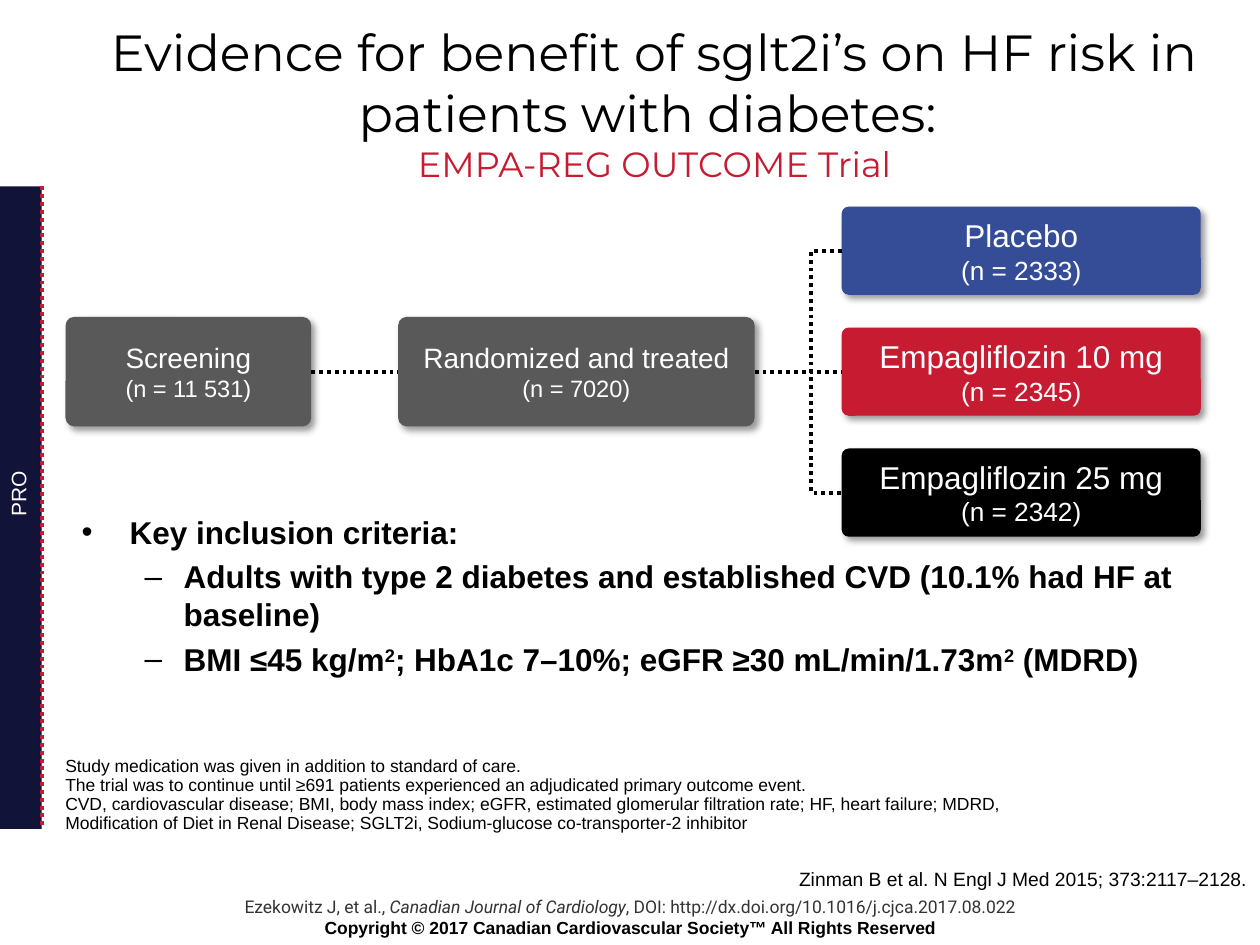
from lxml import etree
from pptx import Presentation
from pptx.dml.color import RGBColor
from pptx.enum.dml import MSO_LINE
from pptx.enum.shapes import MSO_CONNECTOR, MSO_SHAPE
from pptx.enum.text import MSO_ANCHOR, PP_ALIGN
from pptx.oxml import parse_xml
from pptx.oxml.ns import nsdecls, qn
from pptx.util import Inches, Pt

BLACK, WHITE, RED, NAVY, BLUE, GRAY = (
    "000000", "FFFFFF", "C71B32", "111338", "354C97", "595959")
LEFT_SIDE, RIGHT_SIDE = 1, 3


def color(hex_code):
    return RGBColor.from_string(hex_code)


def add_span(para, text, size, hex_code=BLACK, font="Arial", bold=False, italic=False):
    span = para.add_run()
    span.text = text
    span.font.size = Pt(size)
    span.font.name = font
    span.font.bold = bold
    span.font.italic = italic
    span.font.color.rgb = color(hex_code)
    return span


def add_textbox(page, left, top, width, height, anchor=MSO_ANCHOR.TOP, wrap=True):
    box = page.shapes.add_textbox(*map(Inches, (left, top, width, height)))
    box.text_frame.word_wrap = wrap
    box.text_frame.vertical_anchor = anchor
    return box


def next_para(frame, index):
    return frame.add_paragraph() if index else frame.paragraphs[0]


def dot_line(line, hex_code=BLACK):
    line.color.rgb = color(hex_code)
    line.width = Pt(2.25)
    line.dash_style = MSO_LINE.ROUND_DOT


def add_dotted(page, x1, y1, x2, y2, hex_code=BLACK):
    link = page.shapes.add_connector(
        MSO_CONNECTOR.STRAIGHT, *map(Inches, (x1, y1, x2, y2)))
    dot_line(link.line, hex_code)
    etree.SubElement(link._element.spPr, qn("a:effectLst"))
    return link


def add_block(page, kind, left, top, width, height, fill):
    block = page.shapes.add_shape(kind, *map(Inches, (left, top, width, height)))
    block.shadow.inherit = False
    block.fill.solid()
    block.fill.fore_color.rgb = color(fill)
    block.line.fill.background()
    return block


def add_shadow(shape):
    effects = shape._element.spPr.find(qn("a:effectLst"))
    effects.append(parse_xml(
        f'<a:outerShdw {nsdecls("a")} blurRad="{Pt(4)}" dist="{Pt(3)}" dir="2700000" '
        'algn="tl" rotWithShape="0"><a:srgbClr val="000000">'
        '<a:alpha val="40000"/></a:srgbClr></a:outerShdw>'))


def add_group_card(page, left, top, width, height, fill, label, count, sizes):
    card = add_block(page, MSO_SHAPE.ROUNDED_RECTANGLE, left, top, width, height, fill)
    card.adjustments[0] = 0.08
    add_shadow(card)
    frame = card.text_frame
    frame.word_wrap = True
    frame.vertical_anchor = MSO_ANCHOR.MIDDLE
    frame.margin_left = frame.margin_right = 0
    frame.margin_top = frame.margin_bottom = Inches(0.03)
    for index, (text, size) in enumerate(zip((label, count), sizes)):
        para = next_para(frame, index)
        para.alignment = PP_ALIGN.CENTER
        add_span(para, text, size, WHITE)
    return card


def add_title(page, left, top, width, height):
    box = add_textbox(page, left, top, width, height, MSO_ANCHOR.MIDDLE)
    para = box.text_frame.paragraphs[0]
    para.alignment = PP_ALIGN.CENTER
    add_span(para, "Evidence for benefit of sglt2i’s on HF risk in patients with diabetes: ",
             29, font="Montserrat")
    para.add_line_break()
    add_span(para, "EMPA-REG OUTCOME Trial", 20, RED, "Montserrat")


def add_trial_flow(page, left, top, width, height):
    # Treatment arms, evenly stacked at the right
    arm_width, arm_height, step = 2.85, 0.7, 0.96
    arm_left = left + width - arm_width
    arms = [
        ("Placebo", "(n = 2333)", BLUE),
        ("Empagliflozin 10 mg", "(n = 2345)", RED),
        ("Empagliflozin 25 mg", "(n = 2342)", BLACK),
    ]
    arm_cards = [
        add_group_card(page, arm_left, top + row * step, arm_width, arm_height,
                       fill, label, count, (18, 15))
        for row, (label, count, fill) in enumerate(arms)
    ]

    # Screening and randomization, centred on the middle arm
    stage_height = 0.87
    stage_top = top + (height - stage_height) / 2
    stages = [
        (left, 1.95, "Screening", "(n = 11 531)"),
        (left + 2.64, 2.83, "Randomized and treated", "(n = 7020)"),
    ]
    chain = [
        add_group_card(page, stage_left, stage_top, stage_width, stage_height,
                       GRAY, label, count, (16, 13.5))
        for stage_left, stage_width, label, count in stages
    ] + [arm_cards[1]]
    for source, target in zip(chain, chain[1:]):
        link = add_dotted(page, 0, 0, 1, 1)
        link.begin_connect(source, RIGHT_SIDE)
        link.end_connect(target, LEFT_SIDE)

    # Bracket joining the outer arms
    first_y = top + arm_height / 2
    last_y = first_y + 2 * step
    bracket_left = arm_left - 0.24
    builder = page.shapes.build_freeform(Inches(arm_left), Inches(first_y))
    corners = [(bracket_left, first_y), (bracket_left, last_y), (arm_left, last_y)]
    builder.add_line_segments([(Inches(x), Inches(y)) for x, y in corners], close=False)
    bracket = builder.convert_to_shape()
    bracket.shadow.inherit = False
    bracket.fill.background()
    dot_line(bracket.line)


def add_criteria(page, left, top, width, height):
    frame = add_textbox(page, left, top, width, height).text_frame
    # Each item: bullet, left margin, hanging indent, (text, is superscript) parts
    items = [
        ("•", 0.38, 0.38, [("Key inclusion criteria:", False)]),
        ("–", 0.81, 0.31, [
            ("Adults with type 2 diabetes and established CVD (10.1% had HF at baseline)",
             False)]),
        ("–", 0.81, 0.31, [
            ("BMI ≤45 kg/m", False), ("2", True),
            ("; HbA1c 7–10%; eGFR ≥30 mL/min/1.73m", False), ("2", True),
            (" (MDRD)", False)]),
    ]
    for index, (bullet, margin, hanging, parts) in enumerate(items):
        para = next_para(frame, index)
        para.level = min(index, 1)
        props = para._p.get_or_add_pPr()
        props.set("marL", str(Inches(margin)))
        props.set("indent", str(-Inches(hanging)))
        etree.SubElement(props, qn("a:buFont"), typeface="Arial")
        etree.SubElement(props, qn("a:buChar"), char=bullet)
        if index:
            para.space_before = Pt(4)
        for text, raised in parts:
            span = add_span(para, text, 18, bold=True)
            if raised:
                span._r.get_or_add_rPr().set("baseline", "30000")


def add_side_tab(page, left, top, width, height):
    add_block(page, MSO_SHAPE.RECTANGLE, left, top, width, height, NAVY)
    edge = left + width
    add_dotted(page, edge, top, edge, top + height, RED)
    label = add_textbox(page, left - 0.13, top + 2.28, 0.57, 0.3, wrap=False)
    label.rotation = 270
    add_span(label.text_frame.paragraphs[0], "PRO", 12, WHITE)


def add_footnotes(page, left, top, width, height):
    frame = add_textbox(page, left, top, width, height, MSO_ANCHOR.BOTTOM).text_frame
    notes = [
        "Study medication was given in addition to standard of care.",
        "The trial was to continue until ≥691 patients experienced an adjudicated "
        "primary outcome event.",
        "CVD, cardiovascular disease; BMI, body mass index; eGFR, estimated glomerular "
        "filtration rate; HF, heart failure; MDRD, Modification of Diet in Renal Disease; "
        "SGLT2i, Sodium-glucose co-transporter-2 inhibitor",
    ]
    for index, note in enumerate(notes):
        para = next_para(frame, index)
        para.line_spacing = 0.9
        add_span(para, note, 10)


def add_citation(page, left, top, width, height):
    box = add_textbox(page, left, top, width, height, wrap=False)
    para = box.text_frame.paragraphs[0]
    para.alignment = PP_ALIGN.RIGHT
    add_span(para, "Zinman B et al. N Engl J Med 2015; 373:2117–2128.", 11)


def add_footer(page, left, top, width, height):
    frame = add_textbox(page, left, top, width, height).text_frame
    source, rights = frame.paragraphs[0], frame.add_paragraph()
    source.alignment = rights.alignment = PP_ALIGN.CENTER
    for text, italic in [
        ("Ezekowitz J, et al., ", False),
        ("Canadian Journal of Cardiology", True),
        (", DOI: http://dx.doi.org/10.1016/j.cjca.2017.08.022", False),
    ]:
        add_span(source, text, 10, "333333", "Roboto", italic=italic)
    add_span(rights, "Copyright © 2017 Canadian Cardiovascular Society™ All Rights Reserved",
             10, bold=True)


def main():
    deck = Presentation()
    deck.slide_width, deck.slide_height = Inches(10), Inches(7.5)
    page = deck.slides.add_slide(deck.slide_layouts[6])
    add_footer(page, 1.15, 7.06, 7.7, 0.44)
    add_title(page, 0.5, 0.3, 9.39, 1.03)
    add_criteria(page, 0.55, 4.02, 9.35, 2.54)
    add_trial_flow(page, 0.52, 1.64, 9.01, 2.62)
    add_side_tab(page, -0.01, 1.48, 0.34, 5.1)
    add_footnotes(page, 0.42, 6, 8, 0.66)
    add_citation(page, 6.21, 6.83, 3.79, 0.29)
    deck.save("out.pptx")


if __name__ == "__main__":
    main()
